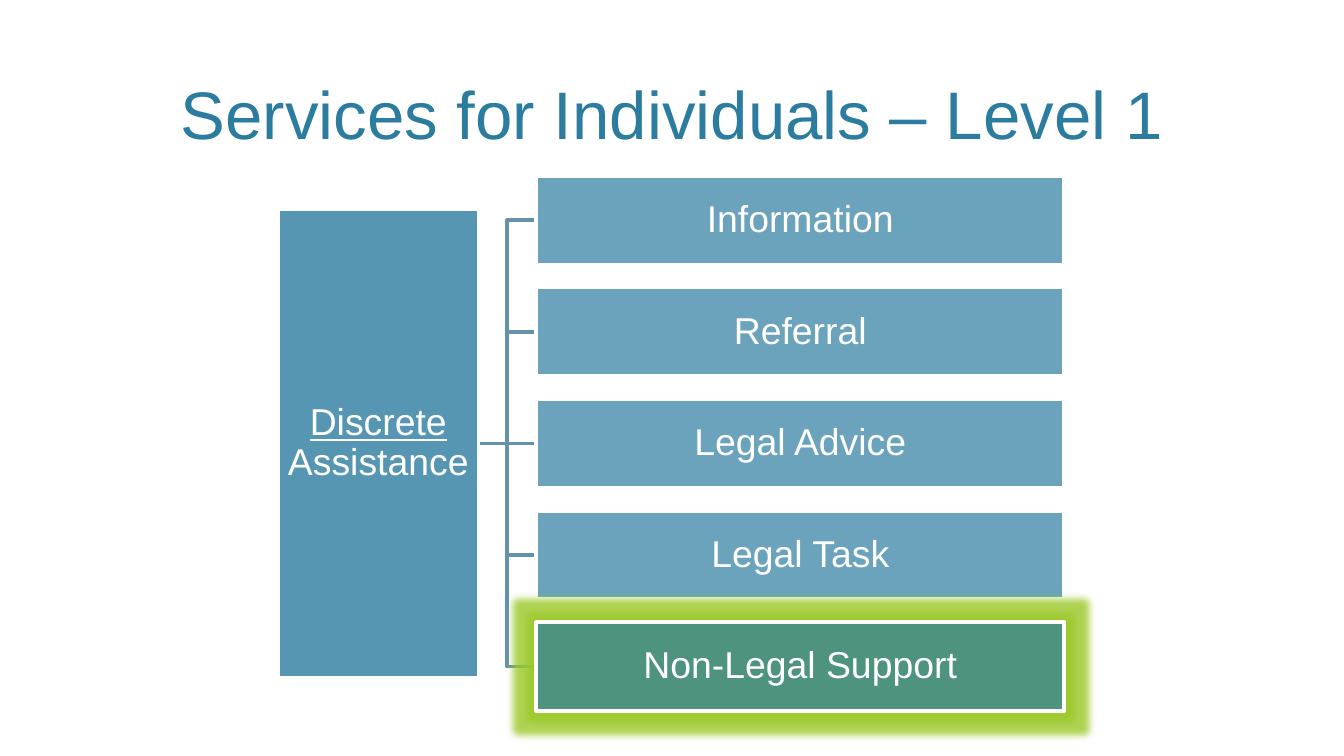
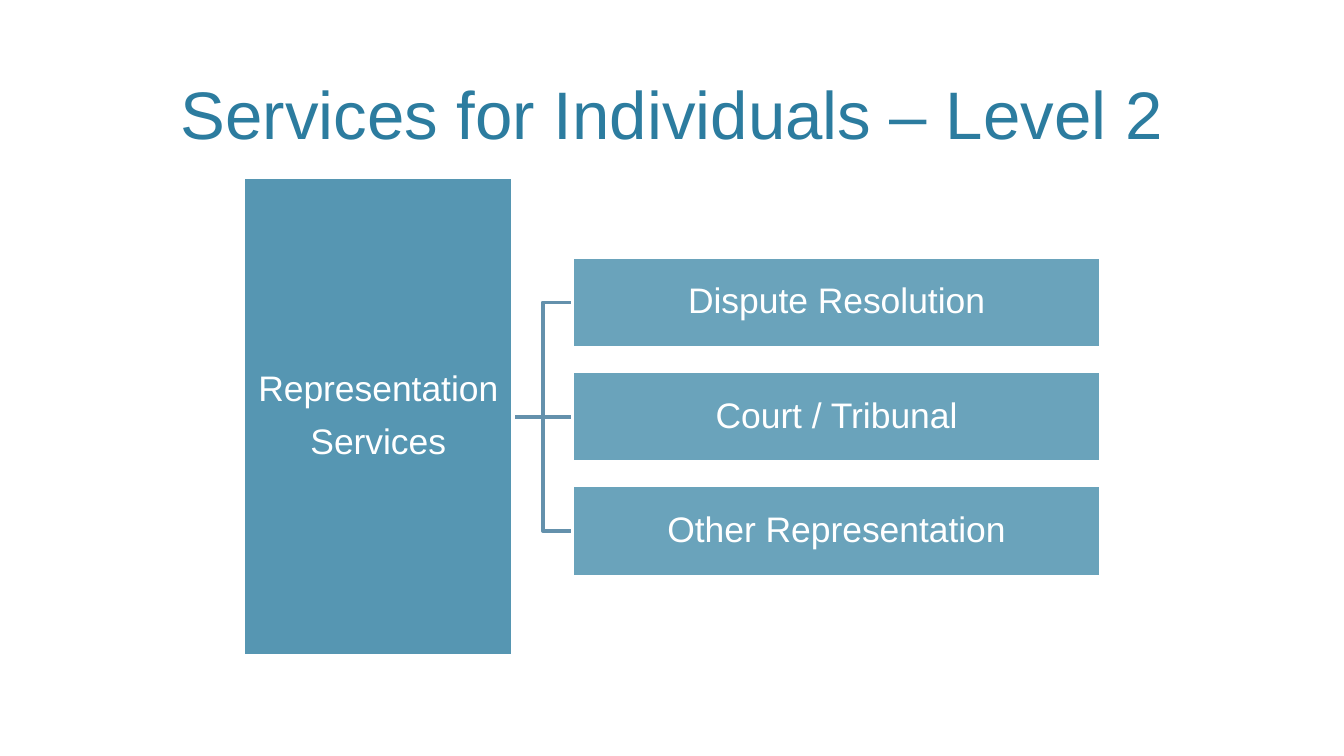
from lxml import etree
from pptx import Presentation
from pptx.dml.color import RGBColor
from pptx.enum.shapes import MSO_CONNECTOR, MSO_SHAPE
from pptx.enum.text import MSO_ANCHOR, PP_ALIGN
from pptx.oxml.ns import qn
from pptx.util import Inches, Pt

RECT = MSO_SHAPE.RECTANGLE
LINE = MSO_CONNECTOR.STRAIGHT
MIDDLE, BOTTOM = MSO_ANCHOR.MIDDLE, MSO_ANCHOR.BOTTOM
CENTER = PP_ALIGN.CENTER
LEFT, RIGHT = 1, 3
COLORS = {"main": "2C7C9F", "link": "6491AC", "text": "FFFFFF", "glow": "9AC827"}
FONT = "Arial"
CELL = Inches(0.1)
COLS, ROWS = 100, 56.25


def grid(*cells):
    return [round(cell * CELL) for cell in cells]


def color(name):
    return RGBColor.from_string(COLORS[name])


def write(frame, lines, size=20, tint="text", anchor=MIDDLE, inset=0.1,
          lead=0.9, after=0, mark=""):
    frame.word_wrap = True
    frame.vertical_anchor = anchor
    frame.margin_left = frame.margin_right = Inches(inset)
    frame.margin_top = frame.margin_bottom = Inches(inset / 2)
    for index, line in enumerate(lines):
        para = frame.add_paragraph() if index else frame.paragraphs[0]
        para.alignment = CENTER
        para.line_spacing = lead
        para.space_after = Pt(after)
        for part in (mark, line.removeprefix(mark)):
            if part:
                run = para.add_run()
                run.text = part
                run.font.name = FONT
                run.font.size = Pt(size)
                run.font.color.rgb = color(tint)
                run.font.underline = part == mark


class Deck:
    def __init__(self):
        self.show = Presentation()
        self.show.slide_width, self.show.slide_height = grid(COLS, ROWS)
        self.shapes = None

    def page(self, title):
        self.shapes = self.show.slides.add_slide(self.show.slide_layouts[6]).shapes
        box = self.shapes.add_textbox(*grid(6, 0.9, 88, 11))
        write(box.text_frame, [title], size=36, tint="main", anchor=BOTTOM, lead=1)

    def box(self, place, lines, alpha, **style):
        shape = self.shapes.add_shape(RECT, *grid(*place))
        shape.shadow.inherit = False
        shape.fill.solid()
        shape.fill.fore_color.rgb = color("main")
        fill = shape.element.spPr.find(qn("a:solidFill"))
        etree.SubElement(fill[0], qn("a:alpha"), val=str(alpha * 1000))
        shape.line.color.rgb = color("text")
        shape.line.width = Pt(2)
        write(shape.text_frame, lines, inset=0.01, after=7.5, **style)
        return shape

    def glow(self, shape):
        effects = shape.element.spPr.find(qn("a:effectLst"))
        halo = etree.SubElement(effects, qn("a:glow"), rad=str(Pt(8)))
        tint = etree.SubElement(halo, qn("a:srgbClr"), val=COLORS["glow"])
        etree.SubElement(tint, qn("a:alpha"), val="80000")

    def ink(self, link):
        link.line.color.rgb = color("link")
        link.line.width = Pt(2)

    def elbow(self, x, y, end, row):
        bend = (x + end) / 2
        start, *rest = [grid(*spot) for spot in
                        ((x, y), (bend, y), (bend, row), (end, row))]
        pen = self.shapes.build_freeform(*start)
        pen.add_line_segments(rest, close=False)
        link = pen.convert_to_shape()
        link.shadow.inherit = False
        link.fill.background()
        self.ink(link)

    def straight(self, x, y, end):
        link = self.shapes.add_connector(LINE, *grid(x, y, end, y))
        etree.SubElement(link.element.spPr, qn("a:effectLst"))
        self.ink(link)
        return link

    def tree(self, root, items, mid, left, wide, tall, start, high, step,
             size, mark="", lit=None):
        edge = left + wide
        half = len(items) // 2
        rows = [mid + step * (index - half) for index in range(len(items))]
        for row in reversed(rows):
            if row != mid:
                self.elbow(edge, mid, start, row)
        link = self.straight(edge, mid, start)
        trunk = self.box((left, mid - tall / 2, wide, tall), root, 80,
                         size=size, mark=mark)
        leaves = [self.box((start, row - high / 2, 39.3, high), [item], 70, size=size)
                  for row, item in zip(rows, items)]
        link.begin_connect(trunk, RIGHT)
        link.end_connect(leaves[half], LEFT)
        if lit is not None:
            self.glow(leaves[lit])


def main():
    deck = Deck()
    deck.page("Services for Individuals – Level 1")
    deck.tree(["Discrete Assistance"],
              ["Information", "Referral", "Legal Advice", "Legal Task",
               "Non-Legal Support"],
              mid=33, left=20.7, wide=14.9, tall=34.9, start=39.9, high=6.6,
              step=8.3, size=20, mark="Discrete", lit=-1)
    deck.page("Services for Individuals – Level 2")
    deck.tree(["Representation", "Services"],
              ["Dispute Resolution", "Court / Tribunal", "Other Representation"],
              mid=31, left=18.1, wide=20.1, tall=35.6, start=42.6, high=6.8,
              step=8.5, size=19)
    deck.show.save("out.pptx")


if __name__ == "__main__":
    main()
